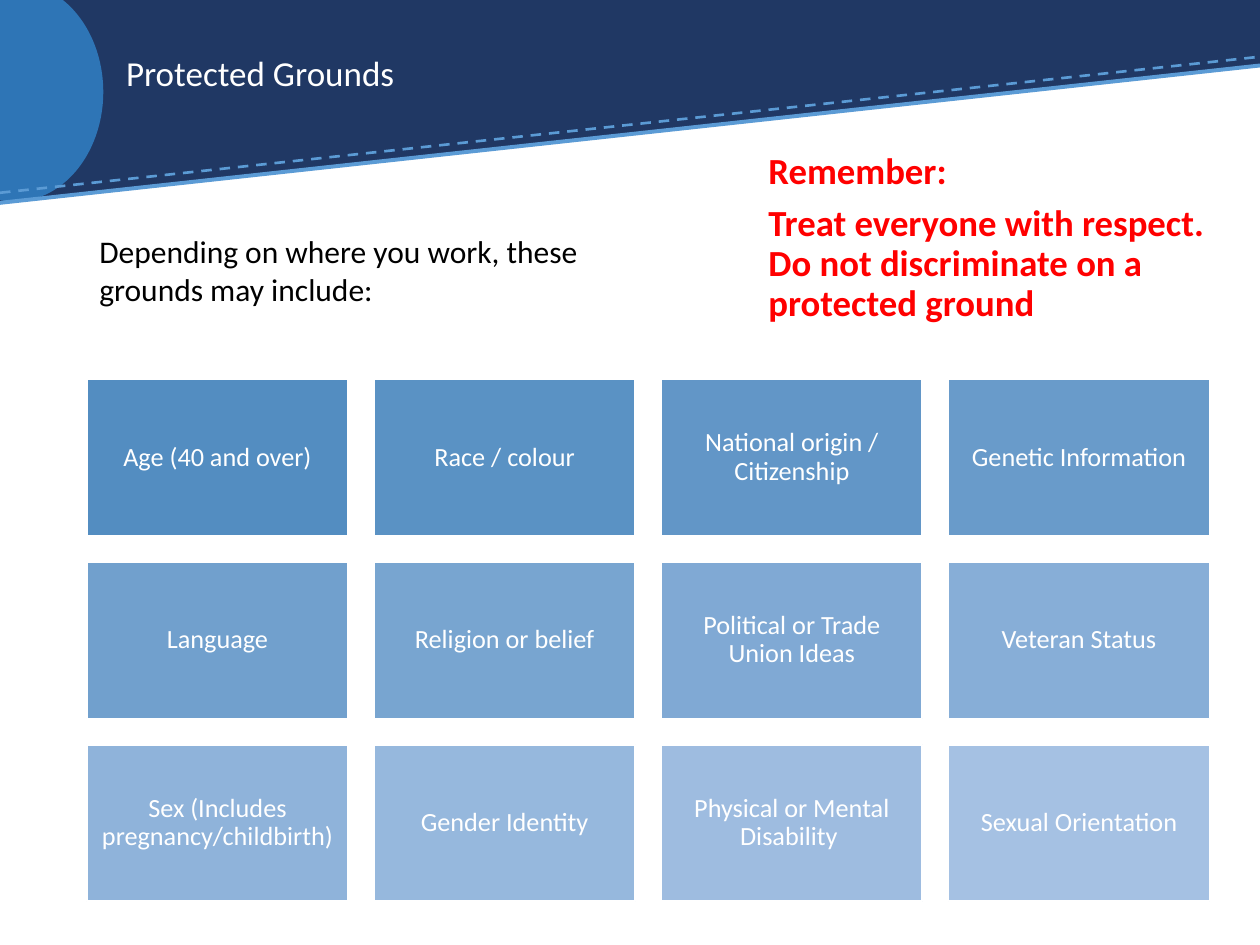
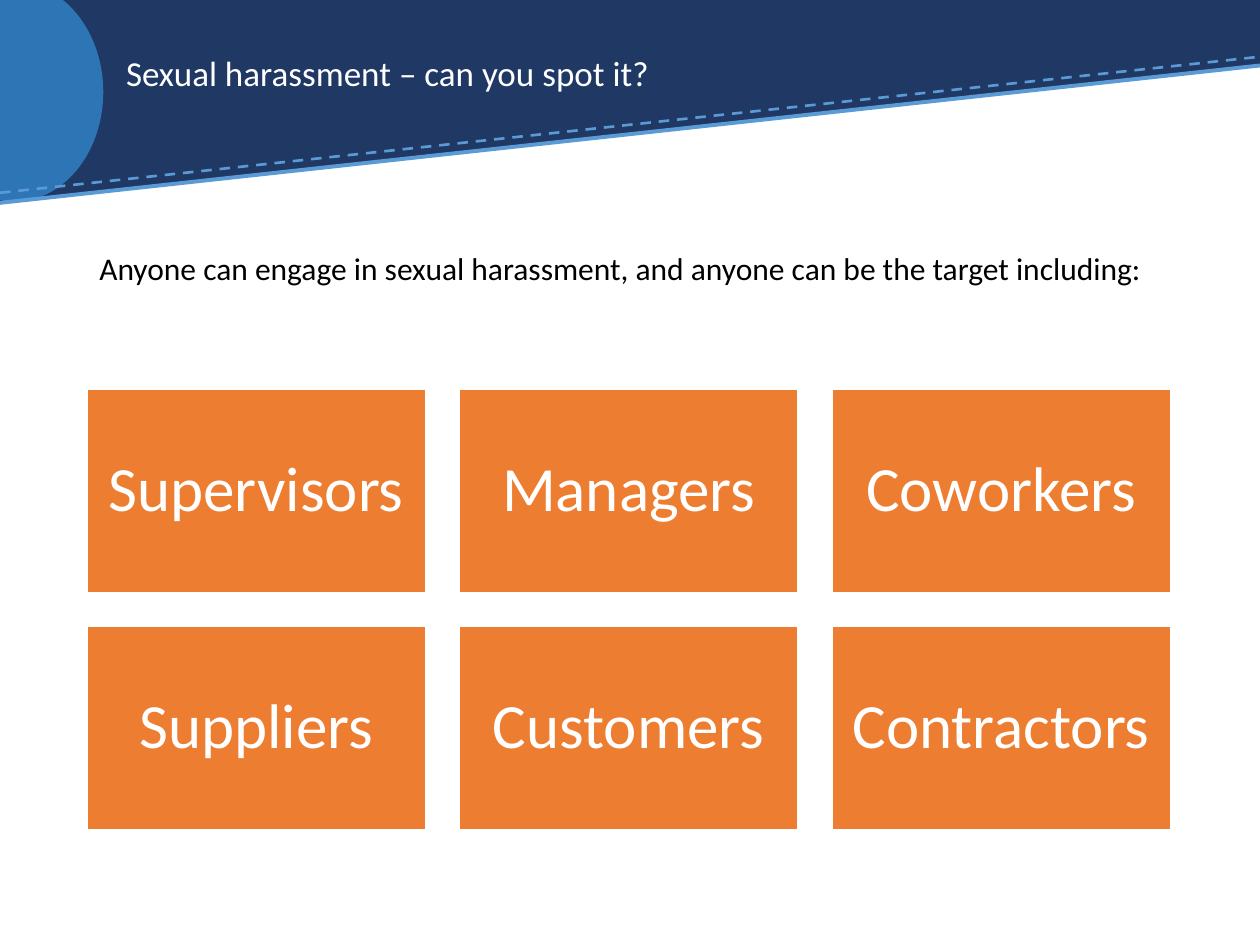
from lxml import etree
from pptx import Presentation
from pptx.dml.color import RGBColor
from pptx.enum.dml import MSO_LINE
from pptx.enum.shapes import MSO_CONNECTOR, MSO_SHAPE
from pptx.enum.text import MSO_ANCHOR, MSO_AUTO_SIZE, PP_ALIGN
from pptx.oxml.ns import qn
from pptx.util import Inches, Pt

RECTANGLE = MSO_SHAPE.RECTANGLE
RIGHT_TRIANGLE = MSO_SHAPE.RIGHT_TRIANGLE
OVAL = MSO_SHAPE.OVAL
STRAIGHT = MSO_CONNECTOR.STRAIGHT
DASH = MSO_LINE.DASH
TOP, MIDDLE = MSO_ANCHOR.TOP, MSO_ANCHOR.MIDDLE
LEFT, CENTER = PP_ALIGN.LEFT, PP_ALIGN.CENTER
TITLE_ONLY = 5

COLORS = {
    "navy": "203864",
    "blue": "2E75B6",
    "sky": "5B9BD5",
    "tile_dark": "538DC1",
    "tile_light": "A5C1E3",
    "orange": "ED7D31",
    "red": "FF0000",
    "black": "000000",
    "white": "FFFFFF",
}
FONT = "Calibri"
GRID_LEFT = 0.69

GROUNDS = [
    "Age (40 and over)", "Race / colour",
    "National origin / Citizenship", "Genetic Information",
    "Language", "Religion or belief",
    "Political or Trade Union Ideas", "Veteran Status",
    "Sex (Includes pregnancy/childbirth)", "Gender Identity",
    "Physical or Mental Disability ", "Sexual Orientation",
]
PEOPLE = ["Supervisors", "Managers", "Coworkers",
          "Suppliers", "Customers", "Contractors"]


def color(name):
    return RGBColor.from_string(COLORS[name])


def blend(start, end, share):
    """Return the colour lying the given share of the way from start to end."""
    return RGBColor(*(round(a + (b - a) * share)
                      for a, b in zip(color(start), color(end))))


class Deck:
    def __init__(self):
        self.presentation = Presentation()
        self.presentation.slide_width = Inches(10)
        self.presentation.slide_height = Inches(7.5)
        self.slide = None

    def new_slide(self, title):
        layout = self.presentation.slide_layouts[TITLE_ONLY]
        self.slide = self.presentation.slides.add_slide(layout)
        self.header()
        self.title(title)

    def header(self):
        self.shape(RECTANGLE, 0, 0, 10, 0.52, color("navy"))
        wedge = self.shape(RIGHT_TRIANGLE, 0, 0.51, 10, 1.09, color("navy"))
        wedge._element.spPr.find(qn("a:xfrm")).set("flipV", "1")
        self.shape(OVAL, -0.59, -0.14, 1.41, 1.74, color("blue"))
        self.line(1.53, 0.45, 1.5, DASH)
        self.line(1.61, 0.52, 2.25)

    def title(self, text):
        title = self.slide.shapes.title
        title.left, title.top = Inches(0.9), Inches(0.2)
        title.width, title.height = Inches(8.07), Inches(0.8)
        self.slide.shapes._spTree.append(title._element)  # in front of the band
        self.fill_text(title.text_frame, [text], 20, "white",
                       anchor=MIDDLE, spacing=0.9)

    def shape(self, kind, left, top, width, height, fill):
        shape = self.slide.shapes.add_shape(
            kind, Inches(left), Inches(top), Inches(width), Inches(height))
        shape.shadow.inherit = False
        shape.fill.solid()
        shape.fill.fore_color.rgb = fill
        shape.line.fill.background()
        return shape

    def line(self, left_y, right_y, weight, dash=None):
        """Draw a line across the whole slide."""
        line = self.slide.shapes.add_connector(
            STRAIGHT, Inches(0), Inches(left_y), Inches(10), Inches(right_y))
        line.line.color.rgb = color("sky")
        line.line.width = Pt(weight)
        if dash:
            line.line.dash_style = dash
        etree.SubElement(line._element.spPr, qn("a:effectLst"))

    def text(self, left, top, width, height, paragraphs, size, ink, **style):
        box = self.slide.shapes.add_textbox(
            Inches(left), Inches(top), Inches(width), Inches(height))
        self.fill_text(box.text_frame, paragraphs, size, ink, **style)

    def fill_text(self, frame, paragraphs, size, ink, bold=False, anchor=TOP,
                  align=LEFT, spacing=1.0, before=0):
        frame.word_wrap = True
        frame.auto_size = MSO_AUTO_SIZE.NONE
        frame.vertical_anchor = anchor
        for index, text in enumerate(paragraphs):
            paragraph = frame.add_paragraph() if index else frame.paragraphs[0]
            paragraph.alignment = align
            paragraph.line_spacing = spacing
            paragraph.space_before = Pt(before if index else 0)
            run = paragraph.add_run()
            run.text = text
            run.font.name = FONT
            run.font.size = Pt(size)
            run.font.bold = bold
            run.font.color.rgb = color(ink)

    def tiles(self, labels, columns, top, total_width, size, first, last):
        """Fill a grid of 5:3 tiles, a tenth of a tile apart, shaded first to last."""
        width = total_width / (columns + 0.1 * (columns - 1))
        height, gap = 0.6 * width, 0.1 * width
        for index, label in enumerate(labels):
            row, column = divmod(index, columns)
            tile = self.shape(
                RECTANGLE, GRID_LEFT + column * (width + gap),
                top + row * (height + gap), width, height,
                blend(first, last, index / (len(labels) - 1)))
            tile.line.color.rgb = color("white")
            tile.line.width = Pt(1)
            frame = tile.text_frame
            frame.margin_left = frame.margin_right = Inches(size / 240)
            frame.margin_top = frame.margin_bottom = Inches(size / 240)
            self.fill_text(frame, [label], size, "white",
                           anchor=MIDDLE, align=CENTER, spacing=0.9)


def protected_grounds(deck):
    deck.new_slide("Protected Grounds")
    deck.text(6, 1.16, 3.78, 1.7,
              ["Remember:",
               "Treat everyone with respect. Do not discriminate on a protected ground"],
              21, "red", bold=True, spacing=0.9, before=7.5)
    deck.tiles(GROUNDS, 4, 3.01, 8.91, 15, "tile_dark", "tile_light")
    deck.text(GRID_LEFT, 1.79, 4.61, 0.71,
              ["Depending on where you work, these grounds may include:"], 18, "black")


def sexual_harassment(deck):
    deck.new_slide("Sexual harassment – can you spot it?")
    deck.tiles(PEOPLE, 3, 3.09, 8.6, 36, "orange", "orange")
    deck.text(GRID_LEFT, 1.93, 9.06, 0.4,
              ["Anyone can engage in sexual harassment, "
               "and anyone can be the target including:"], 18, "black")


def main():
    deck = Deck()
    protected_grounds(deck)
    sexual_harassment(deck)
    deck.presentation.save("out.pptx")


if __name__ == "__main__":
    main()
